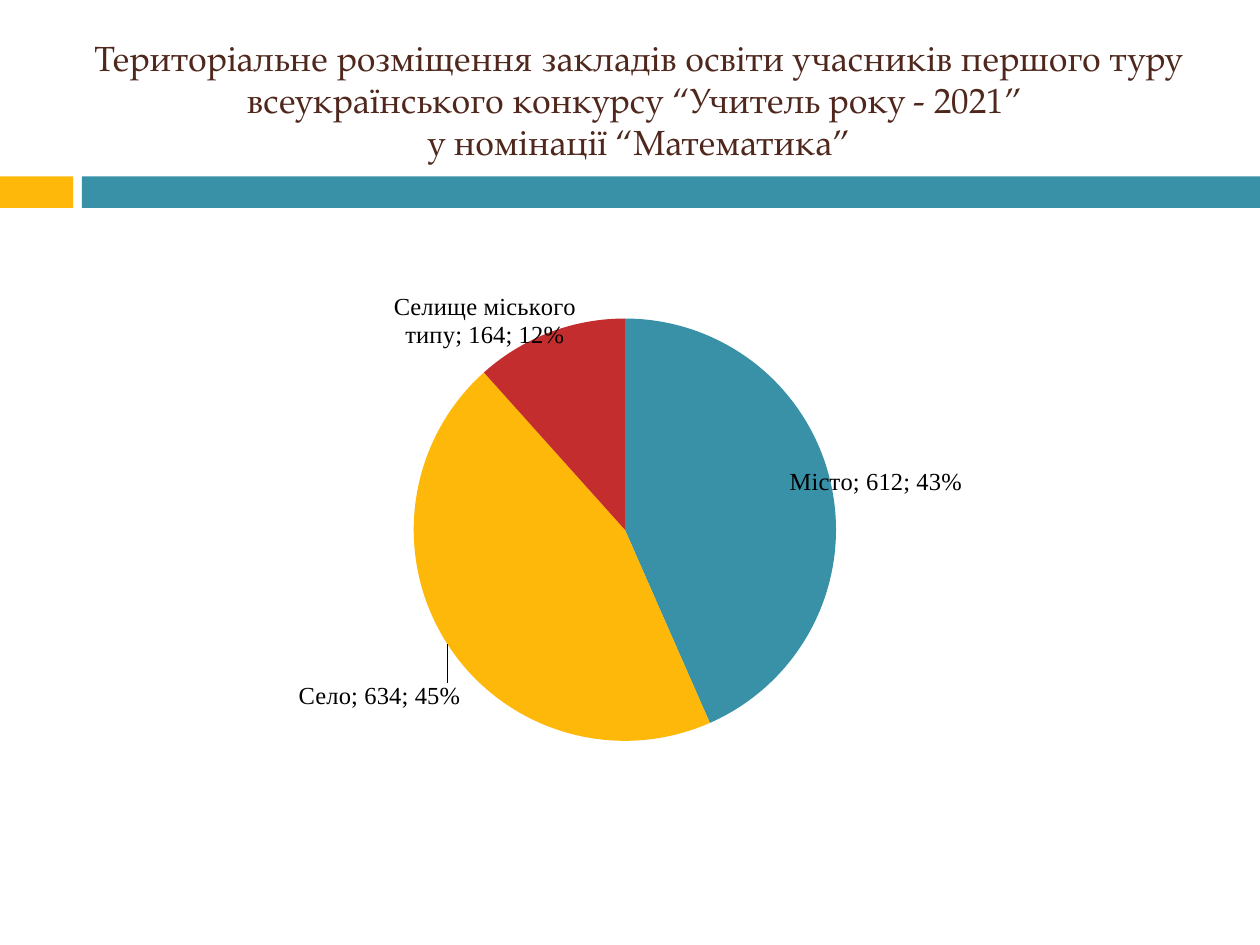
"""Build a slide with a pie chart of where the contest participants' schools are located."""
from copy import deepcopy

from pptx import Presentation
from pptx.chart.data import CategoryChartData
from pptx.dml.color import RGBColor
from pptx.enum.chart import XL_CHART_TYPE, XL_LABEL_POSITION
from pptx.enum.shapes import MSO_SHAPE
from pptx.enum.text import MSO_ANCHOR, PP_ALIGN
from pptx.oxml import parse_xml
from pptx.oxml.ns import nsdecls, qn
from pptx.util import Inches, Pt


def set_format(target, values):
    for name, value in values.items():
        if name == "color":
            target.color.rgb = RGBColor.from_string(value)
        else:
            setattr(target, name, value)


def manual_layout(values):
    parts = "".join(f'<c:{name} val="{value}"/>' for name, value in values.items())
    return parse_xml(
        f'<c:layout {nsdecls("c")}><c:manualLayout>{parts}</c:manualLayout></c:layout>'
    )


presentation = Presentation()
presentation.slide_width = Inches(10)
presentation.slide_height = Inches(7.5)
slide = presentation.slides.add_slide(presentation.slide_layouts[6])

for left, width, color in [(0, 0.58, "FEB80A"), (0.65, 9.35, "3891A7")]:
    band = slide.shapes.add_shape(
        MSO_SHAPE.RECTANGLE, Inches(left), Inches(1.4), Inches(width), Inches(0.25)
    )
    band.shadow.inherit = False
    band.fill.solid()
    band.fill.fore_color.rgb = RGBColor.from_string(color)
    band.line.fill.background()

title = slide.shapes.add_textbox(Inches(0.55), Inches(0.25), Inches(9.04), Inches(1.08))
set_format(title.text_frame, {"word_wrap": True, "vertical_anchor": MSO_ANCHOR.MIDDLE})
paragraph = title.text_frame.paragraphs[0]
paragraph.text = (
    "Територіальне розміщення закладів освіти учасників першого туру "
    "всеукраїнського конкурсу “Учитель року - 2021” \v"
    "у номінації “Математика”"
)
paragraph.alignment = PP_ALIGN.CENTER
for run in paragraph.runs:
    set_format(run.font, {"name": "TeX Gyre Pagella", "size": Pt(20), "color": "4F271C"})

locations = [
    ("Місто", 612, "3891A7", -0.05, 0.02),
    ("Село", 634, "FEB80A", 0.02, 0.06),
    ("Селище міського типу", 164, "C32D2E", 0.03, 0.04),
]
chart_data = CategoryChartData()
chart_data.categories = [location[0] for location in locations]
chart_data.add_series("Series 1", [location[1] for location in locations])
chart = slide.shapes.add_chart(
    XL_CHART_TYPE.PIE, Inches(1.25), Inches(2.03), Inches(7.81), Inches(4.53), chart_data
).chart
set_format(chart, {"has_legend": False, "has_title": False})
set_format(chart.font, {"name": "Calibri", "size": Pt(10), "color": "000000"})

plot = chart.plots[0]
plot.vary_by_categories = True
plot_area = chart._chartSpace.chart.plotArea
for layout in plot_area.findall(qn("c:layout")):
    plot_area.remove(layout)
plot_area.insert(0, manual_layout({
    "layoutTarget": "inner", "xMode": "edge", "yMode": "edge",
    "x": 0.09, "y": 0.11, "w": 0.77, "h": 0.74,
}))

series = plot.series[0]
labels = series.data_labels
set_format(labels, {
    "show_value": True,
    "show_percentage": True,
    "show_category_name": True,
    "position": XL_LABEL_POSITION.OUTSIDE_END,
})
set_format(labels.font, {"name": "Times New Roman", "size": Pt(14), "color": "000000"})
labels_xml = labels._element
separator = parse_xml(f'<c:separator {nsdecls("c")}>; </c:separator>')
labels_xml.find(qn("c:showBubbleSize")).addnext(separator)
shared_settings = [
    child for child in labels_xml if child.tag != qn("c:showLeaderLines")
]

for index, (name, count, color, shift_x, shift_y) in enumerate(locations):
    point_format = series.points[index].format
    point_format.fill.solid()
    point_format.fill.fore_color.rgb = RGBColor.from_string(color)
    point_format.line.fill.background()
    point_label = parse_xml(f'<c:dLbl {nsdecls("c")}><c:idx val="{index}"/></c:dLbl>')
    point_label.append(manual_layout({"x": shift_x, "y": shift_y}))
    point_label.extend(deepcopy(shared_settings))
    labels_xml.insert(index, point_label)

presentation.save("out.pptx")
